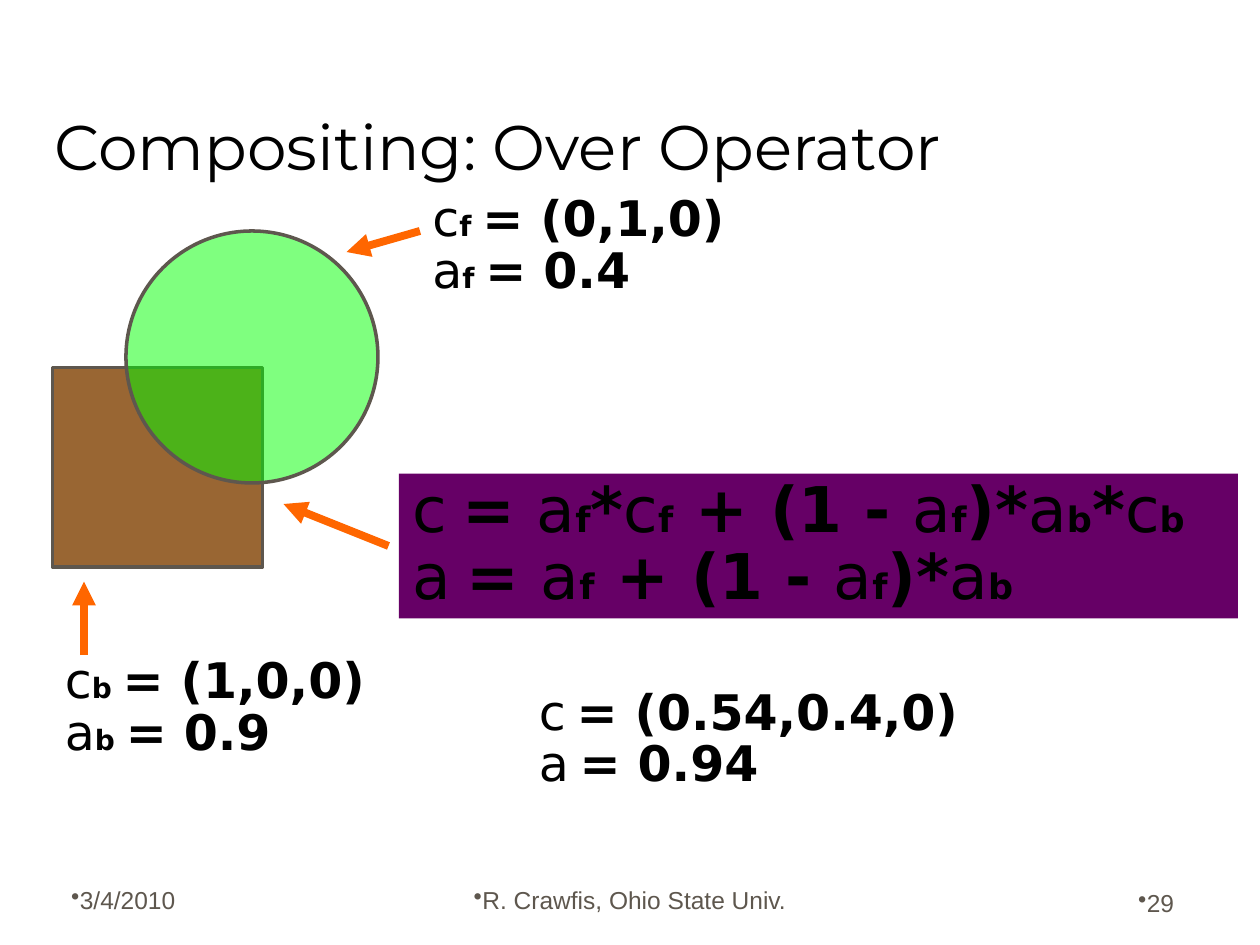
"""Build the slide that explains the over operator for compositing."""
from dataclasses import dataclass
from itertools import groupby
from typing import NamedTuple, Optional

from lxml import etree
from pptx import Presentation
from pptx.dml.color import RGBColor
from pptx.enum.shapes import MSO_CONNECTOR, MSO_SHAPE
from pptx.enum.text import MSO_ANCHOR, MSO_AUTO_SIZE, PP_ALIGN
from pptx.oxml.ns import qn
from pptx.util import Inches, Pt

STRAIGHT = MSO_CONNECTOR.STRAIGHT
RECTANGLE, OVAL = MSO_SHAPE.RECTANGLE, MSO_SHAPE.OVAL
BOTTOM, TOP = MSO_ANCHOR.BOTTOM, MSO_ANCHOR.TOP
LEFT, CENTER, RIGHT = PP_ALIGN.LEFT, PP_ALIGN.CENTER, PP_ALIGN.RIGHT
FIXED, GROW = MSO_AUTO_SIZE.NONE, MSO_AUTO_SIZE.SHAPE_TO_FIT_TEXT
TITLE_ONLY = 5
WIDTH, HEIGHT = Inches(10), Inches(7.5)
COLUMNS, ROWS = 120, 90


class Scale(NamedTuple):
    symbol: int
    index: int
    gap: int


@dataclass(frozen=True)
class Theme:
    ink: str = "000000"
    muted: str = "5E574E"
    arrow: str = "FF6600"
    front: str = "00FF00"
    back: str = "996633"
    panel: str = "660066"
    title_font: str = "Montserrat"
    math_font: str = "DejaVu Sans"
    footer_font: str = "Arial"
    title_size: int = 36
    footer_size: int = 14
    outline: float = 2
    arrow_width: float = 4.5
    value: Scale = Scale(28, 16, 18)
    equation: Scale = Scale(36, 20, 24)


THEME = Theme()


class Area(NamedTuple):
    column: float
    row: float
    columns: float
    rows: float


class Layer(NamedTuple):
    preset: MSO_SHAPE
    area: Area
    color: str
    opacity: int = 100


class Formula(NamedTuple):
    area: Area
    lines: tuple[str, ...]
    scale: Scale = THEME.value
    side_inset: float = 0.1
    panel: Optional[str] = None


class Arrow(NamedTuple):
    start: tuple[float, float]
    end: tuple[float, float]


class Footer(NamedTuple):
    area: Area
    text: str
    align: PP_ALIGN


LAYERS = (
    Layer(RECTANGLE, Area(5, 35, 20, 19), THEME.back),
    Layer(OVAL, Area(12, 22, 24, 24), THEME.front, 50),
)
ARROWS = (
    Arrow((8, 62.4), (8, 55.4)),
    Arrow((40, 22), (33, 24)),
    Arrow((37, 52), (27, 48)),
)
FORMULAS = (
    Formula(Area(5, 62, 31.8, 11), ("cb~= (1,0,0)", "ab~= 0.9")),
    Formula(Area(40, 18, 31, 11), ("cf~= (0,1,0)", "af~= 0.4")),
    Formula(Area(38, 45.1, 79.9, 13.8),
            ("c~= af*cf + (1 - af)*ab*cb", "a~= af + (1 - af)*ab"),
            THEME.equation, 0.11, THEME.panel),
    Formula(Area(50, 65, 43.2, 11), ("c~= (0.54,0.4,0)", "a~= 0.94"), side_inset=0.11),
)
FOOTERS = (
    Footer(Area(5.6, 81.7, 25, 6), "3/4/2010", LEFT),
    Footer(Area(41, 81.7, 38, 6), "R. Crawfis, Ohio State Univ.", CENTER),
    Footer(Area(88, 82, 25, 6), "29", RIGHT),
)


def point(column: float, row: float) -> tuple[int, int]:
    """Turn a grid position into slide lengths."""
    return round(WIDTH * column / COLUMNS), round(HEIGHT * row / ROWS)


def bounds(area: Area) -> tuple[int, ...]:
    """Turn a grid area into left, top, width and height."""
    return point(area.column, area.row) + point(area.columns, area.rows)


def style(font, face: str, size: int, color: str) -> None:
    """Set face, size and colour of a font."""
    font.name, font.size = face, Pt(size)
    font.color.rgb = RGBColor.from_string(color)


def add_solid(slide, preset: MSO_SHAPE, area: Area, color: str):
    """Add a flat filled shape without an outline."""
    solid = slide.shapes.add_shape(preset, *bounds(area))
    solid.shadow.inherit = False
    solid.fill.solid()
    solid.fill.fore_color.rgb = RGBColor.from_string(color)
    solid.line.fill.background()
    return solid


def add_layer(slide, layer: Layer) -> None:
    """Add one of the composited shapes."""
    solid = add_solid(slide, layer.preset, layer.area, layer.color)
    solid.line.color.rgb = RGBColor.from_string(THEME.muted)
    solid.line.width = Pt(THEME.outline)
    if layer.opacity < 100:
        color = solid.fill._xPr.find(qn("a:solidFill"))[0]
        etree.SubElement(color, qn("a:alpha"), val=str(layer.opacity * 1000))


def add_arrow(slide, arrow: Arrow) -> None:
    """Add an arrow that points at its end."""
    pointer = slide.shapes.add_connector(STRAIGHT, *point(*arrow.start), *point(*arrow.end))
    pointer.line.color.rgb = RGBColor.from_string(THEME.arrow)
    pointer.line.width = Pt(THEME.arrow_width)
    etree.SubElement(pointer.line._get_or_add_ln(), qn("a:tailEnd"), type="triangle")
    etree.SubElement(pointer._element.spPr, qn("a:effectLst"))


def role(letter: str) -> str:
    """Tell variables, indices, gaps and operators apart."""
    return {"a": "variable", "c": "variable", "b": "index", "f": "index",
            "~": "gap"}.get(letter, "operator")


def add_formula(slide, formula: Formula) -> None:
    """Add formula lines with bold operators and small indices."""
    if formula.panel:
        box = add_solid(slide, RECTANGLE, formula.area, formula.panel)
    else:
        box = slide.shapes.add_textbox(*bounds(formula.area))
    frame = box.text_frame
    frame.word_wrap, frame.auto_size = False, GROW
    frame.vertical_anchor = TOP
    frame.margin_left = frame.margin_right = Inches(formula.side_inset)
    frame.margin_top = frame.margin_bottom = Inches(0.05)
    sizes = {"index": formula.scale.index, "gap": formula.scale.gap}
    for number, line in enumerate(formula.lines):
        paragraph = frame.add_paragraph() if number else frame.paragraphs[0]
        paragraph.alignment, paragraph.line_spacing = LEFT, 0.88
        style(paragraph.font, THEME.math_font, formula.scale.symbol, THEME.ink)
        for kind, letters in groupby(line, role):
            run = paragraph.add_run()
            run.text = "".join(letters).replace("~", " ")
            style(run.font, THEME.math_font, sizes.get(kind, formula.scale.symbol), THEME.ink)
            run.font.bold = kind != "variable"


def add_footer(slide, footer: Footer) -> None:
    """Add a bulleted footer entry."""
    frame = slide.shapes.add_textbox(*bounds(footer.area)).text_frame
    frame.word_wrap, frame.vertical_anchor = True, BOTTOM
    paragraph = frame.paragraphs[0]
    paragraph.text, paragraph.alignment = footer.text, footer.align
    properties = paragraph._p.get_or_add_pPr()
    properties.set("marL", "0")
    properties.set("indent", "0")
    etree.SubElement(properties, qn("a:buChar"), char="•")
    style(paragraph.font, THEME.footer_font, THEME.footer_size, THEME.muted)


def add_title(slide, text: str) -> None:
    """Place and format the title placeholder."""
    title = slide.shapes.title
    title.left, title.top, title.width, title.height = bounds(Area(4, 3, 112, 15))
    frame = title.text_frame
    frame.text = text
    frame.vertical_anchor, frame.auto_size = BOTTOM, FIXED
    heading = frame.paragraphs[0]
    heading.alignment = LEFT
    style(heading.font, THEME.title_font, THEME.title_size, THEME.ink)


def main() -> None:
    """Build and save the slide."""
    deck = Presentation()
    deck.slide_width, deck.slide_height = WIDTH, HEIGHT
    slide = deck.slides.add_slide(deck.slide_layouts[TITLE_ONLY])
    add_title(slide, "Compositing: Over Operator")
    for draw, items in ((add_footer, FOOTERS), (add_layer, LAYERS),
                        (add_arrow, ARROWS), (add_formula, FORMULAS)):
        for item in items:
            draw(slide, item)
    deck.save("out.pptx")


if __name__ == "__main__":
    main()
